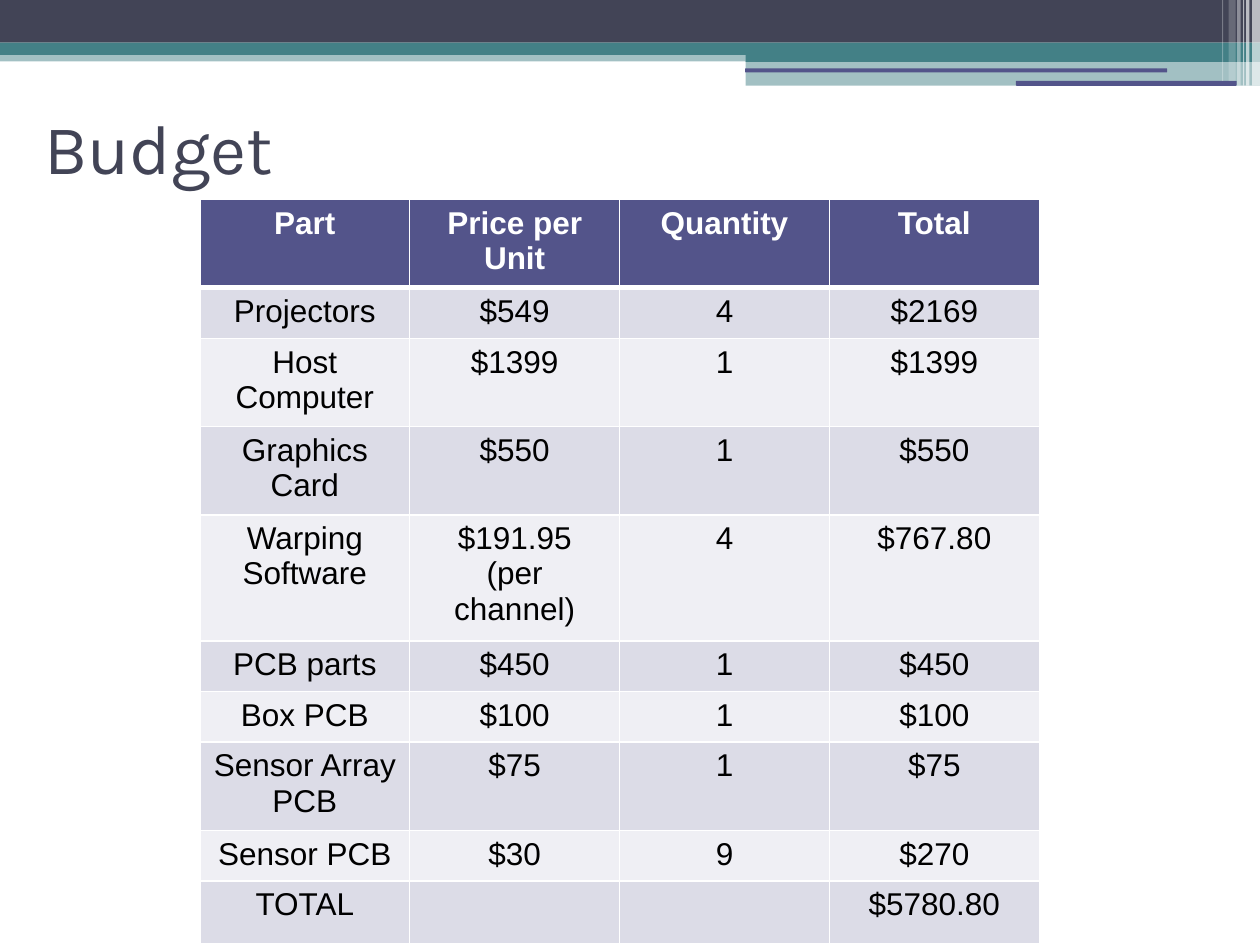
"""Build the budget slide with its banded header and cost table."""
from pptx import Presentation, util as u
from pptx.dml.color import RGBColor
from pptx.enum import shapes, text
from pptx.oxml import parse_xml
from pptx.oxml.ns import nsdecls, qn

INDIGO = RGBColor(0x53, 0x54, 0x8A)
TEAL = RGBColor(0x43, 0x80, 0x86)
SLATE = RGBColor(0x42, 0x44, 0x56)
WHITE = RGBColor(0xFF, 0xFF, 0xFF)
BLACK = RGBColor(0x00, 0x00, 0x00)
BANDS = [RGBColor(0xDC, 0xDC, 0xE7), RGBColor(0xEF, 0xEF, 0xF4)]

RECTANGLE = shapes.MSO_SHAPE.RECTANGLE
ROUNDED = shapes.MSO_SHAPE.ROUNDED_RECTANGLE

BARS = [
    (RECTANGLE, 0, 1.01, 25.4, 0.23, TEAL, 49),
    (RECTANGLE, 0, 0, 25.4, 0.86, SLATE, 100),
    (RECTANGLE, 0, 0.86, 25.4, 0.25, TEAL, 100),
    (RECTANGLE, 15.03, 1, 10.37, 0.25, TEAL, 100),
    (RECTANGLE, 15.03, 1.23, 10.37, 0.5, TEAL, 49),
    (ROUNDED, 15.02, 1.38, 8.51, 0.08, INDIGO, 100),
    (ROUNDED, 20.48, 1.63, 4.45, 0.1, INDIGO, 100),
]
STRIPES = [
    (25.24, 0.16, 1.73, 64),
    (25.12, 0.07, 1.73, 64),
    (25.06, 0.02, 1.73, 60),
    (24.94, 0.07, 1.73, 40),
    (24.77, 0.14, 1.63, 20),
    (24.64, 0.02, 1.63, 29),
]

TITLE = "Budget"
ROWS = [
    (1.75, ["Part", "Price per Unit", "Quantity", "Total"]),
    (1.02, ["Projectors", "$549", "4", "$2169"]),
    (1.77, ["Host Computer", "$1399", "1", "$1399"]),
    (1.77, ["Graphics Card", "$550", "1", "$550"]),
    (2.54, ["Warping Software", "$191.95\n(per channel)", "4", "$767.80"]),
    (1.02, ["PCB parts", "$450", "1", "$450"]),
    (1.02, ["Box PCB", "$100", "1", "$100"]),
    (1.77, ["Sensor Array PCB", "$75", "1", "$75"]),
    (1.02, ["Sensor PCB", "$30", "9", "$270"]),
    (1.27, ["TOTAL", "", "", "$5780.80"]),
]
COLUMN_WIDTH = 4.23
TABLE_LEFT, TABLE_TOP = 4.03, 4.02


def add_bar(slide, kind, left, top, width, height, color, opacity):
    shape = slide.shapes.add_shape(kind, u.Cm(left), u.Cm(top), u.Cm(width), u.Cm(height))
    shape.shadow.inherit = False
    shape.line.fill.background()
    shape.fill.solid()
    shape.fill.fore_color.rgb = color
    if opacity < 100:
        color_element = shape.fill._xPr.find(qn("a:solidFill"))[0]
        color_element.append(parse_xml(f'<a:alpha {nsdecls("a")} val="{opacity * 1000}"/>'))


def set_borders(cell, top, bottom):
    for side, points in (("L", 1), ("R", 1), ("T", top), ("B", bottom)):
        cell._tc.get_or_add_tcPr().append(parse_xml(
            f'<a:ln{side} {nsdecls("a")} w="{u.Pt(points)}"><a:solidFill>'
            f'<a:srgbClr val="{WHITE}"/></a:solidFill></a:ln{side}>'))


def fill_cell(cell, content, row_index):
    is_header = row_index == 0
    set_borders(cell, 3 if row_index == 1 else 1, 3 if is_header else 1)
    cell.fill.solid()
    cell.fill.fore_color.rgb = INDIGO if is_header else BANDS[(row_index - 1) % 2]
    cell.text = content
    for paragraph in cell.text_frame.paragraphs:
        paragraph.alignment = text.PP_ALIGN.CENTER
        paragraph.font.name = "Arial"
        paragraph.font.size = u.Pt(18)
        paragraph.font.bold = is_header
        paragraph.font.color.rgb = WHITE if is_header else BLACK


def add_title(slide):
    title = slide.shapes.title
    title.left, title.top, title.width, title.height = map(u.Cm, (0.64, 1.85, 22.86, 2.21))
    frame = title.text_frame
    frame.text = TITLE
    frame.auto_size = text.MSO_AUTO_SIZE.SHAPE_TO_FIT_TEXT
    frame.vertical_anchor = text.MSO_ANCHOR.MIDDLE
    frame.margin_left = frame.margin_right = u.Cm(0.25)
    frame.margin_top = frame.margin_bottom = u.Cm(0.25)
    paragraph = frame.paragraphs[0]
    paragraph.alignment = text.PP_ALIGN.LEFT
    paragraph.font.name = "Karla"
    paragraph.font.size = u.Pt(40)
    paragraph.font.color.rgb = SLATE


def add_budget_table(slide):
    column_count = len(ROWS[0][1])
    table = slide.shapes.add_table(
        len(ROWS), column_count, u.Cm(TABLE_LEFT), u.Cm(TABLE_TOP),
        u.Cm(COLUMN_WIDTH * column_count), u.Cm(sum(height for height, _ in ROWS))).table
    for column in table.columns:
        column.width = u.Cm(COLUMN_WIDTH)
    for row_index, (height, contents) in enumerate(ROWS):
        table.rows[row_index].height = u.Cm(height)
        for column_index, content in enumerate(contents):
            fill_cell(table.cell(row_index, column_index), content, row_index)


def main():
    presentation = Presentation()
    presentation.slide_width, presentation.slide_height = u.Cm(25.4), u.Cm(19.05)
    slide = presentation.slides.add_slide(presentation.slide_layouts.get_by_name("Title Only"))
    for bar in BARS:
        add_bar(slide, *bar)
    for left, width, height, opacity in STRIPES:
        add_bar(slide, RECTANGLE, left, 0, width, height, WHITE, opacity)
    add_title(slide)
    add_budget_table(slide)
    presentation.save("out.pptx")


if __name__ == "__main__":
    main()
